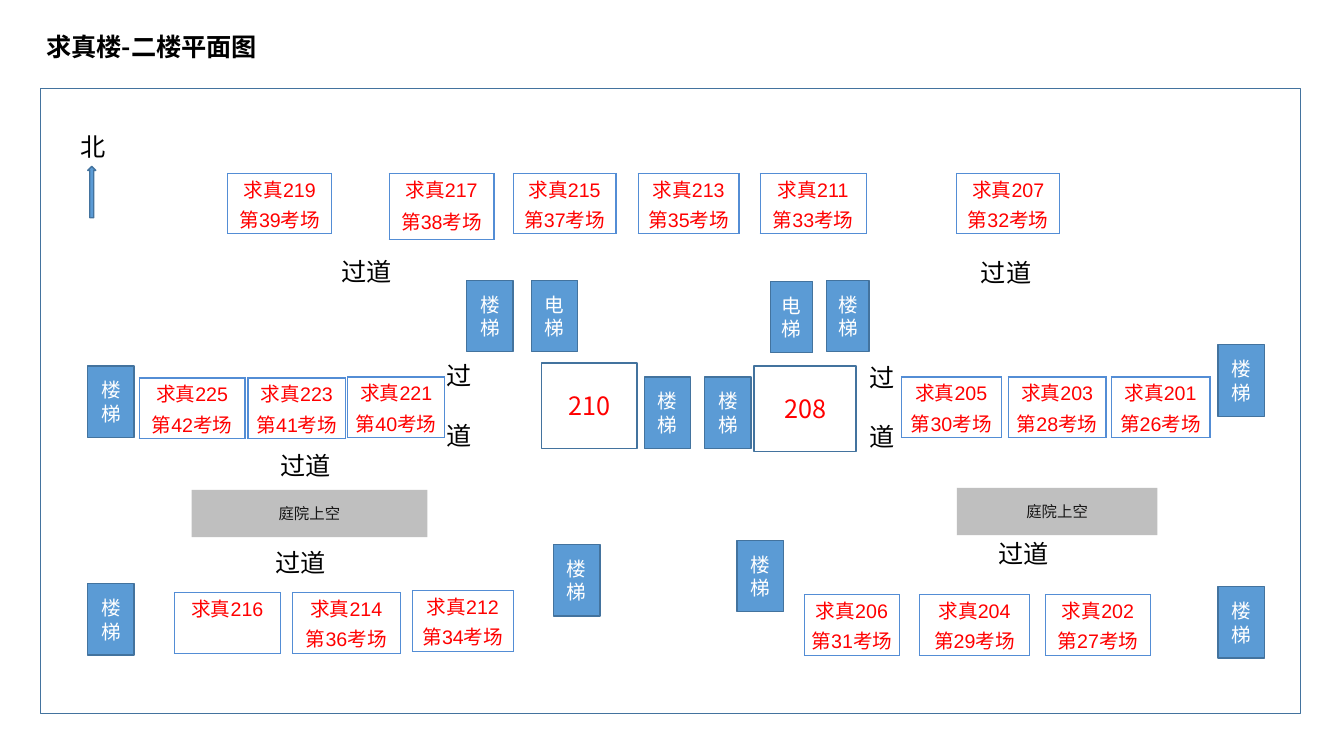
from lxml import etree
from pptx import Presentation
from pptx import util as u
from pptx.dml.color import RGBColor
from pptx.enum import shapes, text
from pptx.oxml import ns

COLORS = {"outline": "43739E", "shaft": "5B9BD5", "court": "BFBFBF", "border": "538DD5",
          "room": "FF0000", "dark": "000000", "court_text": "181717", "white": "FFFFFF"}
CJK = "Noto Sans CJK SC"
NO_STYLE = "{2D5ABB26-0587-4C30-8999-92F81FD0307C}"
EXAM_ROOMS = [201, 202, 203, 204, 205, 206, 207, 211, 212, 213, 214, 215, 217, 219, 221, 223, 225]
HALLS = {room: hall for hall, room in enumerate(EXAM_ROOMS, 26)}
FRAME = (0.4, 0.88, 12.5, 6.2)


def inches(*lengths):
    return [u.Inches(length) for length in lengths]


def color(name):
    return RGBColor.from_string(COLORS[name])


def write(para, words, size, ink, font=CJK, bold=False):
    span = para.add_run()
    span.text = words
    span.font.color.rgb = color(ink)
    for key, value in {"size": u.Pt(size), "name": font, "bold": bold}.items():
        setattr(span.font, key, value)
    etree.SubElement(span.font._element, ns.qn("a:ea"), typeface=CJK)


def add_label(page, box, lines, gap=0, bold=False):
    frame = page.shapes.add_textbox(*inches(*box)).text_frame
    frame.word_wrap = True
    for index, words in enumerate(lines):
        para = frame.add_paragraph() if index else frame.paragraphs[0]
        para.space_before = u.Pt(gap if index else 0)
        write(para, words, 18, "dark", bold=bold)


def add_block(page, box, words="", size=14, ink="white", fill=None, line="outline",
              kind=shapes.MSO_SHAPE.RECTANGLE):
    block = page.shapes.add_shape(kind, *inches(*box))
    block.shadow.inherit = False
    if fill:
        block.fill.solid()
        block.fill.fore_color.rgb = color(fill)
    else:
        block.fill.background()
    if line:
        block.line.color.rgb = color(line)
        block.line.width = u.Pt(1)
    else:
        block.line.fill.background()
    if words:
        block.text_frame.word_wrap = True
        block.text_frame.vertical_anchor = text.MSO_ANCHOR.MIDDLE
        para = block.text_frame.paragraphs[0]
        para.alignment = text.PP_ALIGN.CENTER
        write(para, words, size, ink)


def add_border(cell, sides):
    properties = cell._tc.get_or_add_tcPr()
    for side in sides:
        edge = etree.SubElement(properties, ns.qn(f"a:ln{side}"), w=str(u.Pt(1)))
        fill = etree.SubElement(edge, ns.qn("a:solidFill"))
        etree.SubElement(fill, ns.qn("a:srgbClr"), val=COLORS["border"])


def add_room(page, left, top, width, number, hall_height=0.3):
    table = page.shapes.add_table(2, 1, *inches(left, top, width, 0.3 + hall_height)).table
    table.first_row = table.horz_banding = False
    table._tbl.tblPr.find(ns.qn("a:tableStyleId")).text = NO_STYLE
    hall = f"第{HALLS[number]}考场" if number in HALLS else ""
    rows = [(f"求真{number}", "LRT", 0.3), (hall, "LRB", hall_height)]
    margins = {"margin_left": 0.01, "margin_right": 0.01, "margin_top": 0.01, "margin_bottom": 0.05}
    for index, (words, sides, height) in enumerate(rows):
        table.rows[index].height = u.Inches(height)
        cell = table.cell(index, 0)
        for key, value in margins.items():
            setattr(cell, key, u.Inches(value))
        cell.vertical_anchor = text.MSO_ANCHOR.BOTTOM
        add_border(cell, sides)
        cell.fill.background()
        para = cell.text_frame.paragraphs[0]
        para.alignment = text.PP_ALIGN.CENTER
        if words:
            write(para, words, 14, "room", "Arial")
        else:
            etree.SubElement(para._p, ns.qn("a:endParaRPr"), sz="1400")


def add_shafts(page, left, top, shafts, width=0.46):
    for x, y, words in shafts:
        add_block(page, (left + x, top + y, width, 0.71), words, fill="shaft")


def add_passages(page, left, top, spots):
    for x, y in spots:
        add_label(page, (left + x, top + y, 0.71, 0.4), ["过道"])


def draw_heading(page, left, top):
    add_block(page, FRAME)
    add_label(page, (left, top, 2.35, 0.4), ["求真楼-二楼平面图"], bold=True)


def draw_compass(page, left, top):
    add_label(page, (left, top, 0.68, 0.41), ["北"])
    add_block(page, (left + 0.17, top + 0.4, 0.08, 0.51), fill="shaft",
              kind=shapes.MSO_SHAPE.UP_ARROW)


def draw_north(page, left, top):
    add_passages(page, left, top, [(2.89, 0.77), (9.23, 0.78)])
    add_shafts(page, left, top, [(4.23, 1.06, "楼梯"), (4.87, 1.06, "电梯")])
    add_shafts(page, left, top, [(7.24, 1.07, "电梯"), (7.8, 1.06, "楼梯")], 0.42)
    for x, width, number in [(1.86, 1.03, 219), (4.69, 1.02, 215), (5.93, 1, 213),
                             (7.14, 1.05, 211), (9.09, 1.02, 207)]:
        add_room(page, left + x, top, width, number)
    add_room(page, left + 3.46, top, 1.04, 217, 0.36)


def draw_middle(page, left, top):
    for x, y, width, words in [(4.97, 0, 0.95, "210"), (7.08, 0.03, 1.01, "208")]:
        add_block(page, (left + x, top + y, width, 0.85), words, 18, "room")
    add_shafts(page, left, top, [(x, y, "楼梯") for x, y in
                                 [(0.47, 0.03), (5.99, 0.14), (6.59, 0.14), (11.68, -0.18)]])
    for x, y, width in [(3.93, -0.07, 0.71), (8.13, -0.06, 0.45)]:
        add_label(page, (left + x, top + y, width, 1.01), ["过", "道"], gap=21)
    for x, y, width, number in [(0.98, 0.15, 1.05, 225), (2.06, 0.15, 0.97, 223),
                                (3.05, 0.14, 0.96, 221), (8.54, 0.14, 0.99, 205),
                                (9.6, 0.14, 0.97, 203), (10.62, 0.14, 0.98, 201)]:
        add_room(page, left + x, top + y, width, number)


def draw_south(page, left, top):
    add_passages(page, left, top, [(2.28, 0), (2.23, 0.96), (9.4, 0.87)])
    for x, y, width in [(1.5, 0.44, 2.34), (9.09, 0.42, 1.99)]:
        add_block(page, (left + x, top + y, width, 0.47), "庭院上空", 11, "court_text", "court", None)
    add_shafts(page, left, top, [(x, y, "楼梯") for x, y in
                                 [(0.47, 1.37), (5.09, 0.98), (6.91, 0.94), (11.68, 1.4)]])
    for x, y, width, number in [(1.33, 1.46, 1.05, 216), (2.5, 1.46, 1.07, 214),
                                (3.69, 1.44, 1, 212), (7.58, 1.48, 0.94, 206),
                                (8.72, 1.48, 1.09, 204), (9.97, 1.48, 1.04, 202)]:
        add_room(page, left + x, top + y, width, number)


def main():
    deck = Presentation()
    deck.slide_width, deck.slide_height = inches(13.33, 7.5)
    page = deck.slides.add_slide(deck.slide_layouts[6])
    left, top = FRAME[:2]
    draw_heading(page, left - 0.04, top - 0.62)
    draw_compass(page, left + 0.3, top + 0.37)
    draw_north(page, left, top + 0.84)
    draw_middle(page, left, top + 2.72)
    draw_south(page, left, top + 3.54)
    deck.save("out.pptx")


if __name__ == "__main__":
    main()
